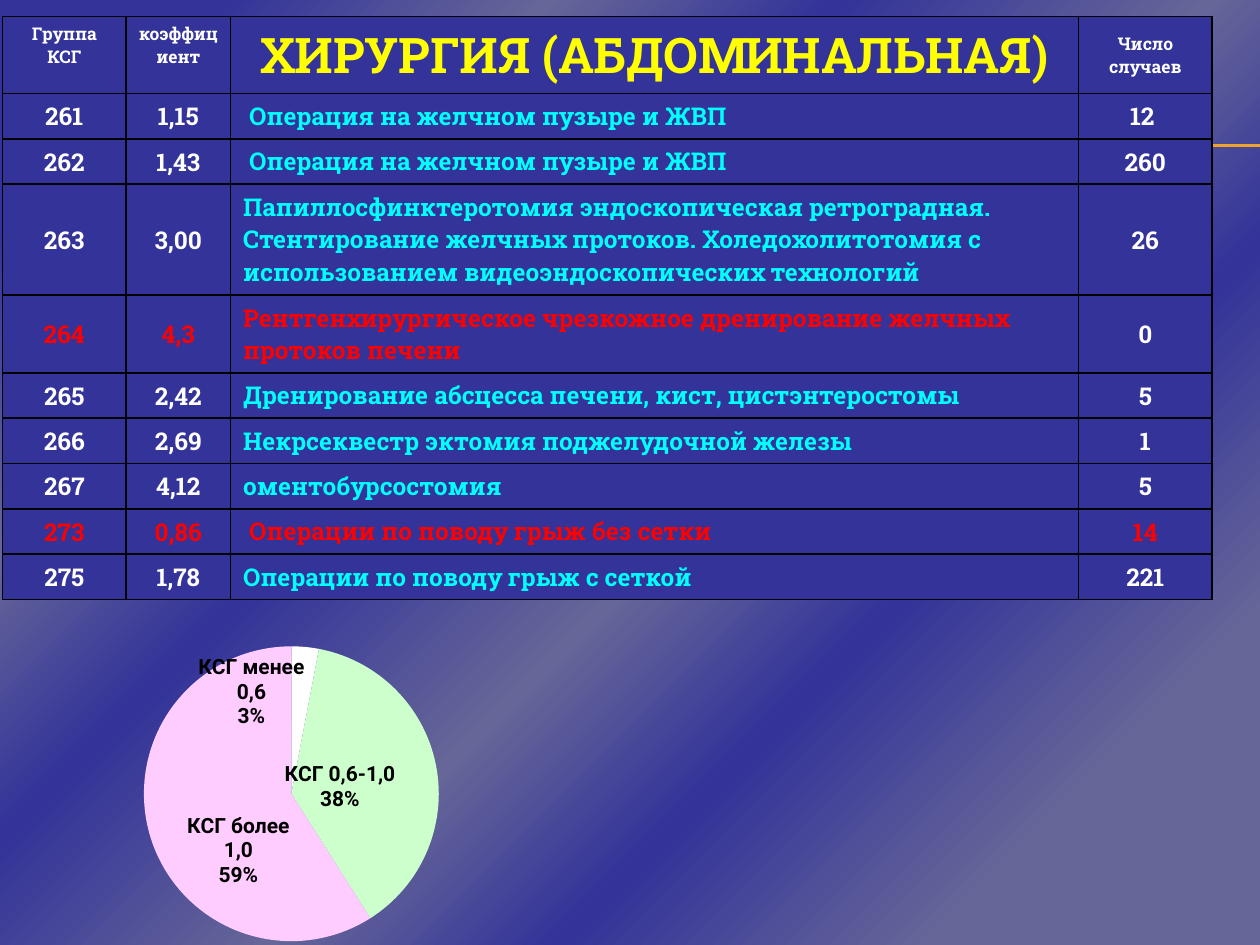
"""Builds the abdominal surgery slide: a table of case groups and a pie of their shares."""
import copy

import lxml.etree
import pptx
import pptx.chart.data
import pptx.dml.color
import pptx.enum.chart
import pptx.enum.shapes
import pptx.enum.text
import pptx.oxml
import pptx.oxml.ns
import pptx.util

Inches = pptx.util.Inches
qn = pptx.oxml.ns.qn

COLORS = {
    "navy": "333399", "slate": "666699", "gold": "F0A22E", "white": "FFFFFF",
    "yellow": "FFFF00", "cyan": "00FFFF", "red": "FF0000", "black": "000000",
    "green": "CCFFCC", "pink": "FFCCFF",
}
GRADIENT = [(0.10, "navy"), (0.25, "slate"), (0.38, "navy"),
            (0.55, "slate"), (0.68, "navy"), (0.85, "slate")]
COLUMN_WIDTHS = [0.98, 0.83, 6.73, 1.06]
HEADER = ["Группа КСГ", "коэффициент", "ХИРУРГИЯ (АБДОМИНАЛЬНАЯ)", "Число\nслучаев"]
ROWS = [
    ("261", "1,15", " Операция на желчном пузыре и ЖВП", "12 "),
    ("262", "1,43", " Операция на желчном пузыре и ЖВП", "260"),
    ("263", "3,00", "Папиллосфинктеротомия эндоскопическая ретроградная.\n"
     "Стентирование желчных протоков. Холедохолитотомия с использованием "
     "видеоэндоскопических технологий", "26"),
    ("264", "4,3", "Рентгенхирургическое чрезкожное дренирование желчных протоков печени", "0"),
    ("265", "2,42", "Дренирование абсцесса печени, кист, цистэнтеростомы", "5"),
    ("266", "2,69", "Некрсеквестр эктомия поджелудочной железы", "1"),
    ("267", "4,12", "оментобурсостомия", "5"),
    ("273", "0,86", " Операции по поводу грыж без сетки", "14"),
    ("275", "1,78", "Операции по поводу грыж с сеткой", "221"),
]
ROW_HEIGHTS = {"263": 0.88, "264": 0.61}
RED_CELLS = {"264": 3, "273": 4}
SHARES = [("КСГ менее 0,6", 3, "white"), ("КСГ 0,6-1,0", 38, "green"),
          ("КСГ более 1,0", 59, "pink")]
LABEL_OFFSETS = {1: (-0.04, 0.02), 2: (0.03, 0.10)}


class SlideBuilder:
    """Holds the style and the current slide."""

    def __init__(self, slide, font="Roboto Slab", chart_font="Roboto"):
        self.slide = slide
        self.font = font
        self.chart_font = chart_font

    def color(self, name):
        return pptx.dml.color.RGBColor.from_string(COLORS[name])

    def background(self, stops):
        fill = self.slide.background.fill
        fill.gradient()
        fill.gradient_angle = 315
        stop_list = next(self.slide.element.iter(qn("a:gsLst")))
        while len(stop_list) < len(stops):
            stop_list.append(copy.deepcopy(stop_list[0]))
        for stop, (position, name) in zip(fill.gradient_stops, stops):
            stop.position = position
            stop.color.rgb = self.color(name)

    def line(self, left, right, top):
        connector = self.slide.shapes.add_connector(
            pptx.enum.shapes.MSO_CONNECTOR.STRAIGHT,
            Inches(left), Inches(top), Inches(right), Inches(top))
        connector.line.color.rgb = self.color("gold")
        connector.line.width = pptx.util.Pt(0.75)
        lxml.etree.SubElement(connector.element.spPr, qn("a:effectLst"))

    def cell(self, cell, text, size, color, centered=True, middle=True):
        for index, line in enumerate(text.split("\n")):
            frame = cell.text_frame
            para = frame.add_paragraph() if index else frame.paragraphs[0]
            if centered:
                para.alignment = pptx.enum.text.PP_ALIGN.CENTER
            span = para.add_run()
            span.text = line
            span.font.name = self.font
            span.font.size = pptx.util.Pt(size)
            span.font.bold = True
            span.font.color.rgb = self.color(color)
        if middle:
            cell.vertical_anchor = pptx.enum.text.MSO_ANCHOR.MIDDLE
        cell.fill.solid()
        cell.fill.fore_color.rgb = self.color("navy")
        properties = cell.fill._xPr
        for index, side in enumerate(("lnL", "lnR", "lnT", "lnB")):
            border = lxml.etree.Element(qn("a:" + side), w="12700")
            solid = lxml.etree.SubElement(border, qn("a:solidFill"))
            lxml.etree.SubElement(solid, qn("a:srgbClr"), val=COLORS["black"])
            properties.insert(index, border)

    def table(self, left, top, header, rows):
        heights = [0.61] + [ROW_HEIGHTS.get(row[0], 0.36) for row in rows]
        table = self.slide.shapes.add_table(
            len(heights), len(header), Inches(left), Inches(top),
            Inches(sum(COLUMN_WIDTHS)), Inches(sum(heights))).table
        for column, width in zip(table.columns, COLUMN_WIDTHS):
            column.width = Inches(width)
        for row, height in zip(table.rows, heights):
            row.height = Inches(height)
        for column, text in enumerate(header):
            size, color = (28, "yellow") if column == 2 else (10, "white")
            self.cell(table.cell(0, column), text, size, color, middle=column == 3)
        for number, row in enumerate(rows, 1):
            for column, text in enumerate(row):
                color = "cyan" if column == 2 else "white"
                if column < RED_CELLS.get(row[0], 0):
                    color = "red"
                self.cell(table.cell(number, column), text, 14, color,
                          centered=column != 2, middle=column != 2)

    def layout(self, **values):
        layout = pptx.oxml.parse_xml("<c:layout %s/>" % pptx.oxml.ns.nsdecls("c"))
        manual = lxml.etree.SubElement(layout, qn("c:manualLayout"))
        for name, value in values.items():
            lxml.etree.SubElement(manual, qn("c:" + name), val=str(value))
        return layout

    def label_font(self, font):
        font.name = self.chart_font
        font.size = pptx.util.Pt(12)
        font.bold = True
        font.color.rgb = self.color("black")

    def pie(self, left, top, width, height, shares):
        data = pptx.chart.data.CategoryChartData()
        data.categories = [name for name, value, color in shares]
        data.add_series("Series 1", [value for name, value, color in shares])
        chart = self.slide.shapes.add_chart(
            pptx.enum.chart.XL_CHART_TYPE.PIE, Inches(left), Inches(top),
            Inches(width), Inches(height), data).chart
        chart.has_title = False
        chart.has_legend = False
        chart.font.name = self.chart_font
        chart.font.size = pptx.util.Pt(18)
        chart.font.color.rgb = self.color("black")
        plot_area = next(chart.element.iter(qn("c:plotArea")))
        for old in plot_area.findall(qn("c:layout")):
            plot_area.remove(old)
        plot_area.insert(0, self.layout(layoutTarget="inner", xMode="edge", yMode="edge",
                                        x=0.07, y=0.18, w=0.84, h=0.81))
        series = chart.plots[0].series[0]
        for index, (name, value, color) in enumerate(shares):
            fill = series.points[index].format.fill
            fill.solid()
            fill.fore_color.rgb = self.color(color)
        labels = series.data_labels
        labels.show_value = False
        labels.show_category_name = True
        labels.show_percentage = True
        labels.position = pptx.enum.chart.XL_LABEL_POSITION.INSIDE_END
        self.label_font(labels.font)
        for index, (x, y) in LABEL_OFFSETS.items():
            label = series.points[index].data_label
            self.label_font(label.font)
            label.position = pptx.enum.chart.XL_LABEL_POSITION.CENTER
        for element in chart.element.iter(qn("c:dLbl")):
            x, y = LABEL_OFFSETS[int(element.find(qn("c:idx")).get("val"))]
            element.insert(1, self.layout(x=x, y=y))
            for tag, shown in (("showVal", "0"), ("showCatName", "1"), ("showPercent", "1")):
                element.find(qn("c:" + tag)).set("val", shown)
        for tag in ("c:dLbl", "c:dLbls"):
            for element in chart.element.iter(qn(tag)):
                separator = lxml.etree.Element(qn("c:separator"))
                separator.text = "\n"
                last = element.find(qn("c:showBubbleSize"))
                if last is None:
                    last = element.find(qn("c:showPercent"))
                last.addnext(separator)


def main():
    deck = pptx.Presentation()
    deck.slide_width = Inches(10)
    deck.slide_height = Inches(7.5)
    page = SlideBuilder(deck.slides.add_slide(deck.slide_layouts[6]))
    page.background(GRADIENT)
    for top in (1.15, 1.16):
        page.line(0.56, 10, top)
    page.table(0.02, 0.13, HEADER, ROWS)
    page.pie(0, 4.61, 4.72, 2.89, SHARES)
    deck.save("out.pptx")


if __name__ == "__main__":
    main()
